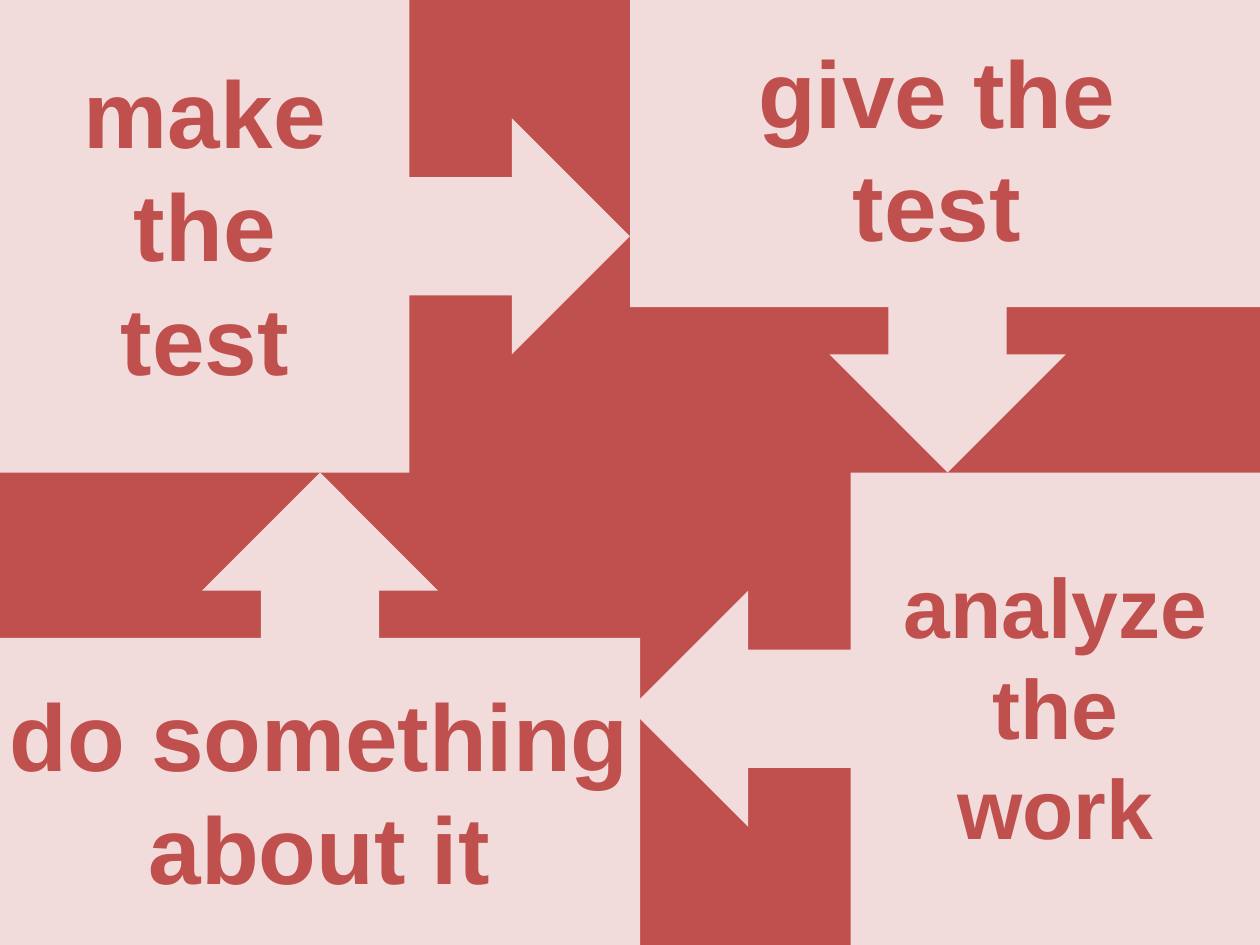
from pptx import Presentation
from pptx import util as u
from pptx.dml import color
from pptx.enum import shapes, text

COLORS = {"red": "C0504D", "pink": "F2DCDB"}
COLUMNS, ROWS = 100, 75
HALF_WIDTH, HALF_HEIGHT = COLUMNS / 2, ROWS / 2


class CycleSlide:
    font = "Arial"

    def __init__(self, presentation):
        self.slide = presentation.slides.add_slide(presentation.slide_layouts[6])
        self.column = presentation.slide_width / COLUMNS
        self.row = presentation.slide_height / ROWS

    def box(self, left, top, width, height):
        return [u.Emu(round(value * unit)) for value, unit in (
            (left, self.column), (top, self.row),
            (width, self.column), (height, self.row))]

    def paint(self, shape, fill):
        shape.fill.solid()
        shape.fill.fore_color.rgb = color.RGBColor.from_string(COLORS[fill])

    def preset(self, parent, kind, area, fill):
        shape = parent.add_shape(kind, *self.box(*area))
        shape.shadow.inherit = False
        shape.line.fill.background()
        self.paint(shape, fill)
        return shape

    def background(self, fill):
        area = (0, 0, COLUMNS, ROWS)
        self.preset(self.slide.shapes, shapes.MSO_SHAPE.RECTANGLE, area, fill)

    def callout(self, parent, area, rotation):
        left, top, width, height = area
        if rotation % 180:
            left += (width - height) / 2
            top += (height - width) / 2
            width, height = height, width
        shape = self.preset(parent, shapes.MSO_SHAPE.RIGHT_ARROW_CALLOUT,
                            (left, top, width, height), "pink")
        shape.rotation = rotation

    def label(self, parent, area, wording, size, fill):
        shape = parent.add_textbox(*self.box(*area))
        if fill:
            self.paint(shape, fill)
        frame = shape.text_frame
        frame.text = wording
        frame.word_wrap = True
        frame.auto_size = text.MSO_AUTO_SIZE.SHAPE_TO_FIT_TEXT
        for paragraph in frame.paragraphs:
            paragraph.alignment = text.PP_ALIGN.CENTER
            for run in paragraph.runs:
                run.font.name = self.font
                run.font.size = u.Pt(size)
                run.font.bold = True
                run.font.color.rgb = color.RGBColor.from_string(COLORS["red"])

    def step(self, callout_area, rotation, label_area, wording, size, fill):
        parent = self.slide.shapes.add_group_shape().shapes
        self.callout(parent, callout_area, rotation)
        self.label(parent, label_area, wording, size, fill)


STEPS = [
    ((0, 0, HALF_WIDTH, HALF_HEIGHT), 0,
     (2.5, 3.8, 27.5, 28.3), "make\vthe\vtest", 54, "pink"),
    ((HALF_WIDTH, 0, 50.4, HALF_HEIGHT), 90,
     (53.3, 2.2, 42.1, 19.2), "give the\vtest", 54, "pink"),
    ((HALF_WIDTH, HALF_HEIGHT, HALF_WIDTH, HALF_HEIGHT), 180,
     (67.5, 43.5, 32.5, 25.2), "analyze\nthe\vwork", 48, None),
    ((0, HALF_HEIGHT, 50.8, HALF_HEIGHT), 270,
     (-1.3, 53.2, 53.3, 19.2), "do something about it", 54, None),
]


def main():
    presentation = Presentation()
    presentation.slide_width = u.Inches(10)
    presentation.slide_height = u.Inches(7.5)
    cycle = CycleSlide(presentation)
    cycle.background("red")
    for step in STEPS:
        cycle.step(*step)
    presentation.save("out.pptx")


if __name__ == "__main__":
    main()
